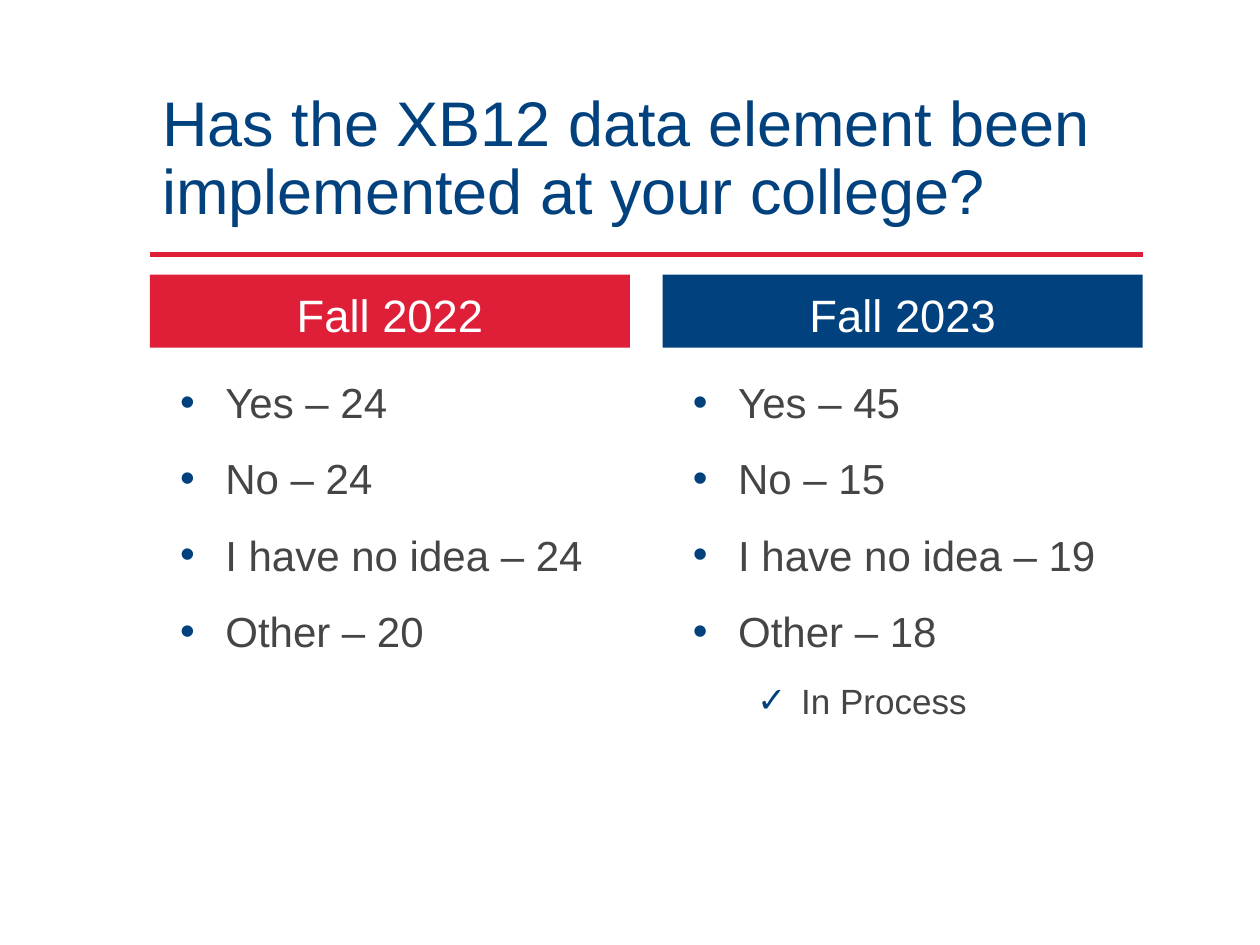
import pptx
import pptx.util
import pptx.dml.color
import pptx.enum.shapes
import pptx.enum.text
import pptx.oxml.ns
from lxml import etree
from pptx.util import Inches, Pt

RED, BLUE, GREY, WHITE = "DE1F37", "00417E", "454545", "FFFFFF"
LEFT, WIDTH = 1.19, 7.88
COLUMN_WIDTH = 3.81
COLUMNS = [
    ("Fall 2022", RED, [("Yes – 24", 0), ("No – 24", 0),
                        ("I have no idea – 24", 0), ("Other – 20", 0)]),
    ("Fall 2023", BLUE, [("Yes – 45", 0), ("No – 15", 0),
                         ("I have no idea – 19", 0), ("Other – 18", 0),
                         ("In Process", 1)]),
]
# level: bullet, size, space before, left margin, hanging indent
LEVELS = [("•", 24, 9, 0.5, 0.36), ("✓", 20, 8.5, 1, 0.35)]


def rgb(value):
    """Turn a hex string into a colour."""
    return pptx.dml.color.RGBColor.from_string(value)


def style(p, size, color, spacing, before=0):
    """Format a paragraph and its runs."""
    p.line_spacing = spacing
    p.space_before = Pt(before)
    for r in p.runs:
        r.font.name = "Arial"
        r.font.size = Pt(size)
        r.font.color.rgb = rgb(color)


def add_bullet(p, char, color, margin, hanging):
    """Give a paragraph a coloured bullet and a hanging indent."""
    qn = pptx.oxml.ns.qn
    pPr = p._p.get_or_add_pPr()
    pPr.set("marL", str(Inches(margin)))
    pPr.set("indent", str(-Inches(hanging)))
    clr = etree.SubElement(pPr, qn("a:buClr"))
    etree.SubElement(clr, qn("a:srgbClr"), val=color)
    etree.SubElement(pPr, qn("a:buFont"), typeface="Arial")
    etree.SubElement(pPr, qn("a:buChar"), char=char)


def add_title(s, x, y, w, h, text):
    """Place the title and the rule below it."""
    tf = s.shapes.add_textbox(Inches(x), Inches(y), Inches(w), Inches(h)).text_frame
    tf.word_wrap = True
    tf.vertical_anchor = pptx.enum.text.MSO_ANCHOR.BOTTOM
    tf.text = text
    style(tf.paragraphs[0], 36, BLUE, 0.9)
    rule_y = Inches(y + h + 0.16)
    rule = s.shapes.add_connector(pptx.enum.shapes.MSO_CONNECTOR.STRAIGHT,
                                  Inches(x), rule_y, Inches(x + w), rule_y)
    rule.line.color.rgb = rgb(RED)
    rule.line.width = Pt(2.5)
    etree.SubElement(rule._element.spPr, pptx.oxml.ns.qn("a:effectLst"))


def add_header(s, x, y, w, h, text, color):
    """Place the filled heading of a column."""
    sp = s.shapes.add_shape(pptx.enum.shapes.MSO_SHAPE.RECTANGLE,
                            Inches(x), Inches(y), Inches(w), Inches(h))
    sp.shadow.inherit = False
    sp.fill.solid()
    sp.fill.fore_color.rgb = rgb(color)
    sp.line.fill.background()
    tf = sp.text_frame
    tf.vertical_anchor = pptx.enum.text.MSO_ANCHOR.BOTTOM
    tf.text = text
    p = tf.paragraphs[0]
    p.alignment = pptx.enum.text.PP_ALIGN.CENTER
    style(p, 25.9, WHITE, 0.8, 7.5)


def add_answers(s, x, y, w, h, answers):
    """Place the bulleted answers of a column."""
    tf = s.shapes.add_textbox(Inches(x), Inches(y), Inches(w), Inches(h)).text_frame
    tf.word_wrap = True
    for i, (text, level) in enumerate(answers):
        p = tf.add_paragraph() if i else tf.paragraphs[0]
        p.text = text
        p.level = level
        char, size, before, margin, hanging = LEVELS[level]
        style(p, size, GREY, 1.2, before)
        add_bullet(p, char, BLUE, margin, hanging)


def main():
    """Build the slide and save it."""
    prs = pptx.Presentation()
    prs.slide_width, prs.slide_height = Inches(10), Inches(7.5)
    s = prs.slides.add_slide(prs.slide_layouts[6])
    add_title(s, LEFT, 0.88, WIDTH, 0.98,
              "Has the XB12 data element been implemented at your college?")
    for i, (heading, color, answers) in enumerate(COLUMNS):
        x = LEFT + i * (WIDTH - COLUMN_WIDTH)
        add_header(s, x, 2.18, COLUMN_WIDTH, 0.58, heading, color)
        add_answers(s, x, 2.86, COLUMN_WIDTH, 3.75, answers)
    prs.save("out.pptx")


if __name__ == "__main__":
    main()
